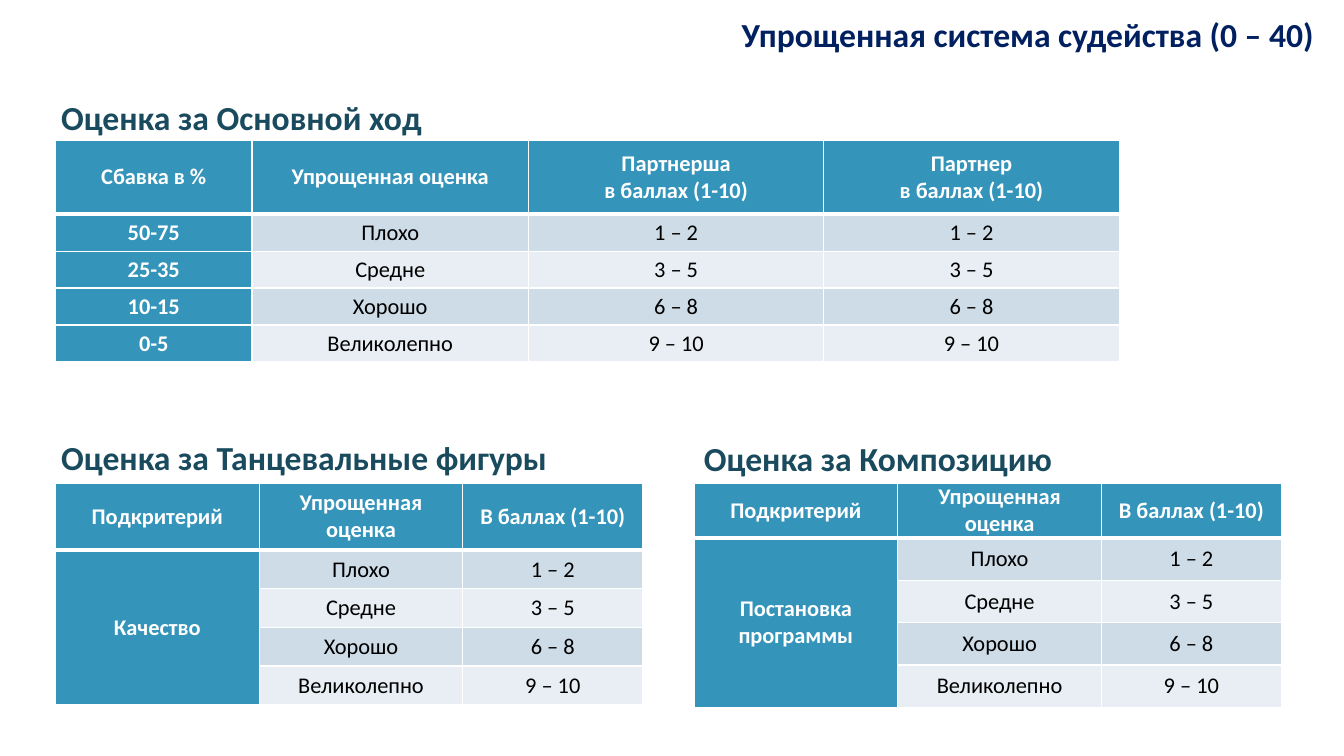
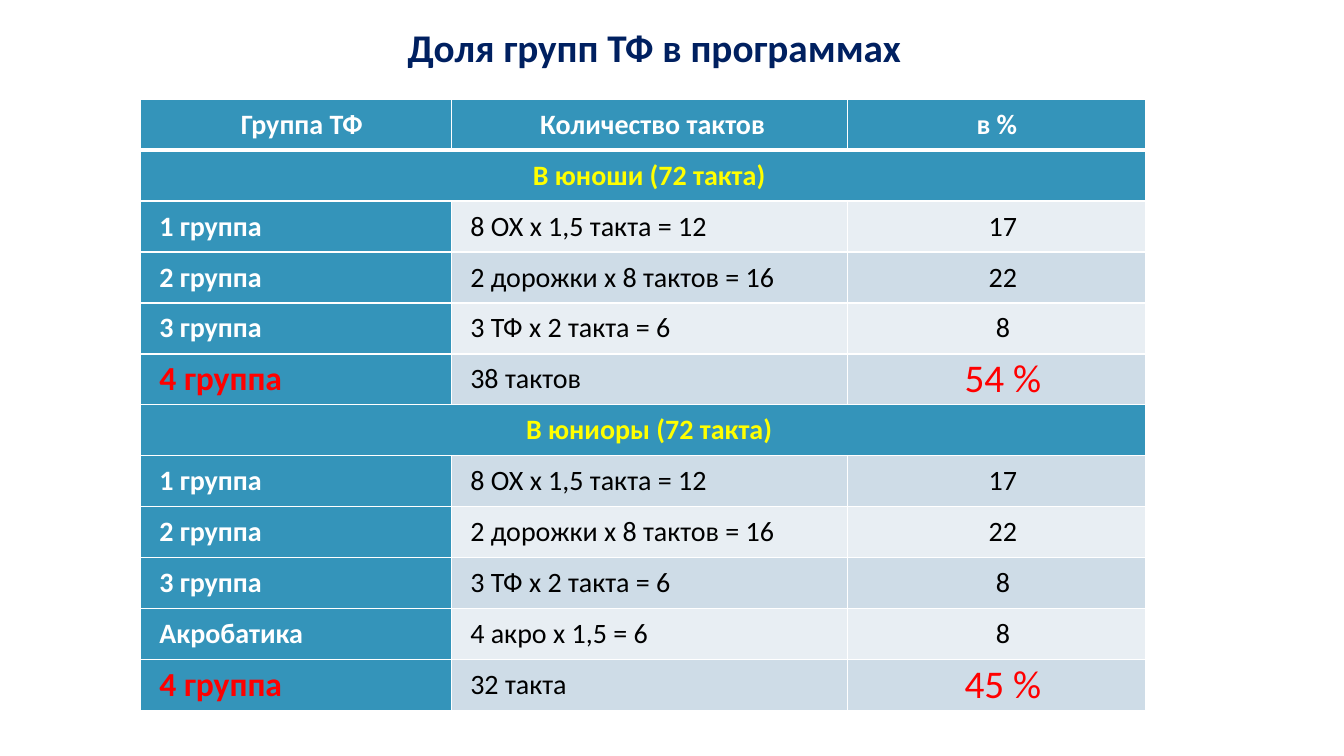
from dataclasses import dataclass, field
from typing import Optional

from lxml.etree import SubElement
from pptx import Presentation
from pptx.dml.color import RGBColor
from pptx.enum.text import MSO_ANCHOR, MSO_AUTO_SIZE, PP_ALIGN
from pptx.oxml.ns import qn
from pptx.util import Inches, Pt

# Shared look
FONT = "Calibri"
WHITE = RGBColor(0xFF, 0xFF, 0xFF)
BLACK = RGBColor(0x00, 0x00, 0x00)
RED = RGBColor(0xFF, 0x00, 0x00)
YELLOW = RGBColor(0xFF, 0xFF, 0x00)
NAVY = RGBColor(0x00, 0x20, 0x60)
DEEP_TEAL = RGBColor(0x1A, 0x4A, 0x5D)
TEAL = RGBColor(0x34, 0x94, 0xBA)
BAND_DARK = RGBColor(0xCE, 0xDC, 0xE7)
BAND_LIGHT = RGBColor(0xE8, 0xEE, 0xF3)

# Slide grid: 160 columns by 90 rows of square units
WIDTH, HEIGHT = Inches(13.33), Inches(7.5)
UNIT = HEIGHT / 90


@dataclass(frozen=True)
class Label:
    text: str
    x: float
    y: float
    width: float
    height: float = 6
    size: int = 24
    color: RGBColor = DEEP_TEAL
    align: PP_ALIGN = PP_ALIGN.LEFT
    wrap: bool = False


@dataclass(frozen=True)
class Accent:
    """A cell that departs from the table's usual size or colour."""
    text: str
    color: RGBColor
    size: Optional[int] = None


@dataclass(frozen=True)
class Grid:
    x: float
    y: float
    cols: list[float]
    head_height: float
    row_height: float
    rows: list[list]
    size: int = 16
    indent: float = 0
    left_cols: int = 0
    # Each merge is first row, first column, last row, last column
    merges: list[tuple[int, int, int, int]] = field(default_factory=list)


def units(n: float) -> int:
    return round(n * UNIT)


def set_font(p, size: int, color: RGBColor, bold: bool) -> None:
    p.font.name = FONT
    p.font.size = Pt(size)
    p.font.bold = bold
    p.font.color.rgb = color


def add_label(s, label: Label) -> None:
    sp = s.shapes.add_textbox(*map(units, (label.x, label.y, label.width, label.height)))
    tf = sp.text_frame
    tf.word_wrap = label.wrap
    tf.auto_size = MSO_AUTO_SIZE.SHAPE_TO_FIT_TEXT
    p = tf.paragraphs[0]
    p.text = label.text
    p.alignment = label.align
    set_font(p, label.size, label.color, True)


def set_borders(cell, top: float, bottom: float) -> None:
    tc_pr = cell._tc.get_or_add_tcPr()
    sides = (("a:lnL", 1), ("a:lnR", 1), ("a:lnT", top), ("a:lnB", bottom))
    for i, (tag, width) in enumerate(sides):
        ln = SubElement(tc_pr, qn(tag), w=str(Pt(width)))
        fill = SubElement(ln, qn("a:solidFill"))
        SubElement(fill, qn("a:srgbClr"), val=str(WHITE))
        tc_pr.insert(i, ln)


def fill_cell(cell, grid: Grid, r: int, c: int, value) -> None:
    heading = r == 0 or c == 0
    accent = value if isinstance(value, Accent) else None
    color = accent.color if accent else WHITE if heading else BLACK
    size = accent.size if accent and accent.size else grid.size
    left = r > 0 and c < grid.left_cols and not cell.is_merge_origin

    cell.margin_left = cell.margin_right = Inches(0.07)
    cell.margin_top = cell.margin_bottom = 0
    cell.vertical_anchor = MSO_ANCHOR.MIDDLE
    cell.fill.solid()
    cell.fill.fore_color.rgb = TEAL if heading else BAND_DARK if r % 2 else BAND_LIGHT
    set_borders(cell, top=3 if r == 1 else 1, bottom=3 if r == 0 else 1)

    cell.text_frame.text = accent.text if accent else value
    for p in cell.text_frame.paragraphs:
        p.alignment = PP_ALIGN.LEFT if left or False else PP_ALIGN.CENTER
        if grid.indent and (r > 0 or c == 0):
            p._p.get_or_add_pPr().set("marL", str(Inches(grid.indent)))
        set_font(p, size, color, heading)


def add_grid(s, grid: Grid) -> None:
    heights = [grid.head_height] + [grid.row_height] * (len(grid.rows) - 1)
    frame = s.shapes.add_table(
        len(heights), len(grid.cols), units(grid.x), units(grid.y),
        units(sum(grid.cols)), units(sum(heights)))
    table = frame.table
    table.horz_banding = False
    for col, width in zip(table.columns, grid.cols):
        col.width = units(width)
    for row, height in zip(table.rows, heights):
        row.height = units(height)
    for r0, c0, r1, c1 in grid.merges:
        table.cell(r0, c0).merge(table.cell(r1, c1))
    for r, values in enumerate(grid.rows):
        for c, value in enumerate(values):
            if value is not None:
                fill_cell(table.cell(r, c), grid, r, c, value)


# Slide 1: marks and points
MARKS = [("Плохо", "1 – 2"), ("Средне", "3 – 5"),
         ("Хорошо", "6 – 8"), ("Великолепно", "9 – 10")]
DEDUCTIONS = ["50-75", "25-35", "10-15", "0-5"]
LEFT_X, RIGHT_X = 6.6, 82.6


def criterion_grid(name: str, x: float, head_height: float, row_height: float) -> Grid:
    names = [name, None, None, None]
    return Grid(
        x, 57.5, [24.25, 24.25, 21.4], head_height, row_height,
        [["Подкритерий", "Упрощенная оценка", "В баллах (1-10)"]]
        + [[n, *mark] for n, mark in zip(names, MARKS)],
        merges=[(1, 0, 4, 0)])


SCORING_LABELS = [
    Label("Оценка за Основной ход", 6.1, 10.9, 46.6),
    Label("Оценка за Танцевальные фигуры", 6.1, 51.4, 60.8),
    Label("Оценка за Композицию", RIGHT_X, 51.5, 45.1),
    Label("Упрощенная система судейства (0 – 40)", 87.1, 1.1, 71, color=NAVY, wrap=True),
]
SCORING_GRIDS = [
    Grid(LEFT_X, 16.7, [23.4, 32.9, 35.15, 35.15], 8.8, 4.4,
         [["Сбавка в %", "Упрощенная оценка",
           "Партнерша\nв баллах (1-10)", "Партнер\nв баллах (1-10)"]]
         + [[d, mark, points, points] for d, (mark, points) in zip(DEDUCTIONS, MARKS)]),
    criterion_grid("Качество", LEFT_X, 8, 4.6),
    criterion_grid("Постановка программы", RIGHT_X, 6.4, 5.05),
]

# Slide 2: share of each group
GROUPS = [
    ["1 группа", "8 ОХ х 1,5 такта = 12", "17"],
    ["2 группа", "2 дорожки х 8 тактов = 16", "22"],
    ["3 группа", "3 ТФ х 2 такта = 6", "8"],
]


def section_row(text: str) -> list:
    return [Accent(text, YELLOW), None, None]


def fourth_group(bars: str, share: str) -> list:
    return [Accent("4 группа", RED, 24), bars, Accent(share, RED, 28)]


SHARE_LABELS = [Label("Доля групп ТФ в программах", 47.2, 2.2, 61.3, 6.8, 28, NAVY,
                      PP_ALIGN.CENTER)]
SHARE_GRIDS = [
    Grid(16.7, 11.8, [37, 47.2, 35.5], 6.07, 6.07,
         [["Группа ТФ", " Количество тактов", "в %"],
          section_row("В юноши (72 такта)"),
          *GROUPS,
          fourth_group("38 тактов", "54 %"),
          section_row("В юниоры (72 такта)"),
          *GROUPS,
          ["Акробатика", "4 акро х 1,5 = 6", "8"],
          fourth_group("32 такта", "45 %")],
         size=20, indent=0.12, left_cols=2,
         merges=[(1, 0, 1, 2), (6, 0, 6, 2)]),
]


def main() -> None:
    prs = Presentation()
    prs.slide_width, prs.slide_height = WIDTH, HEIGHT
    for labels, grids in ((SCORING_LABELS, SCORING_GRIDS), (SHARE_LABELS, SHARE_GRIDS)):
        s = prs.slides.add_slide(prs.slide_layouts[6])
        for grid in grids:
            add_grid(s, grid)
        for label in labels:
            add_label(s, label)
    prs.save("out.pptx")


if __name__ == "__main__":
    main()
